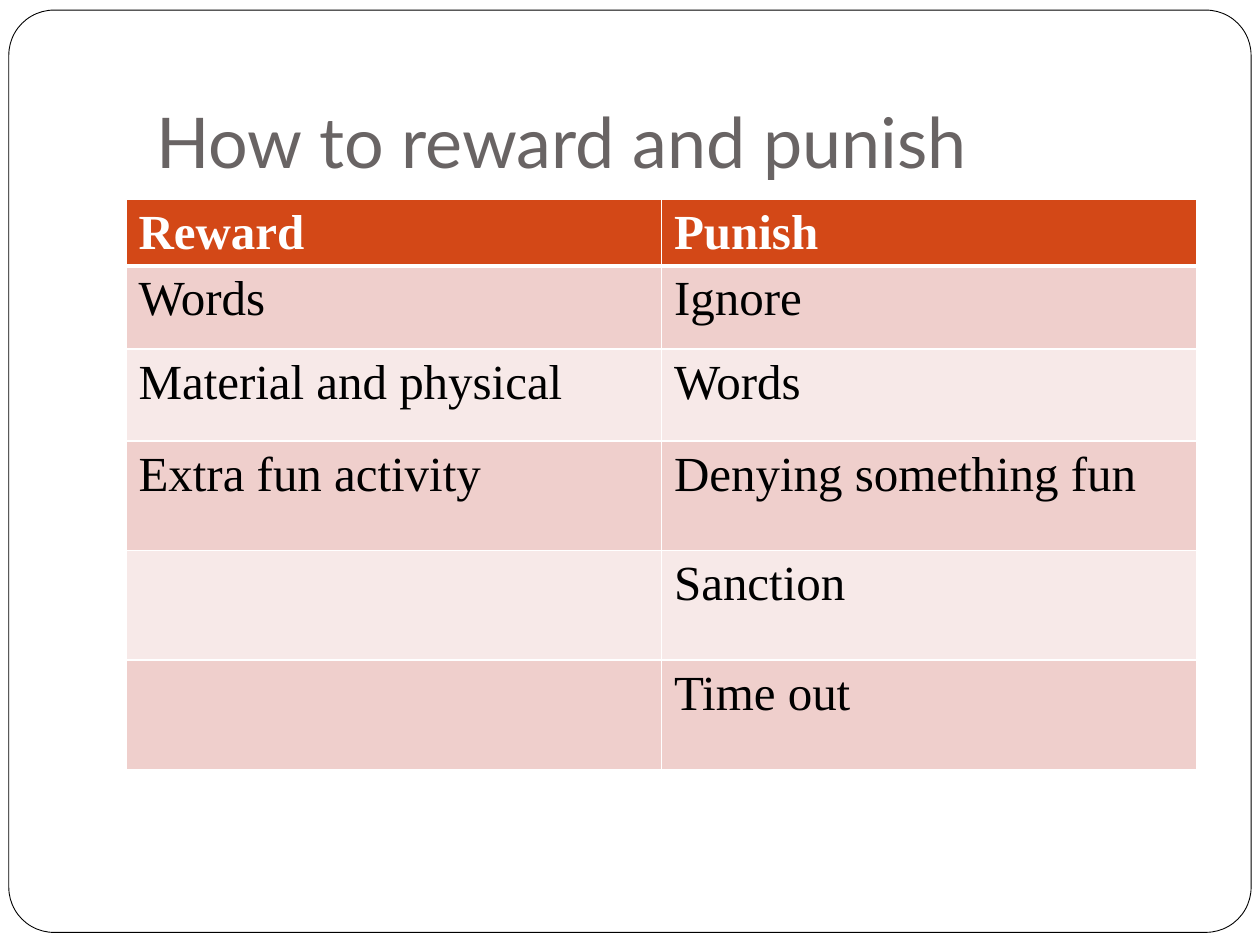
from dataclasses import dataclass

from lxml import etree
from pptx import Presentation
from pptx.dml.color import RGBColor
from pptx.enum.shapes import MSO_SHAPE
from pptx.enum.text import MSO_ANCHOR, PP_ALIGN
from pptx.oxml.ns import qn
from pptx.util import Inches, Pt

ROUNDED = MSO_SHAPE.ROUNDED_RECTANGLE
BOTTOM = MSO_ANCHOR.BOTTOM
LEFT = PP_ALIGN.LEFT

WHITE = RGBColor(0xFF, 0xFF, 0xFF)
BLACK = RGBColor(0x00, 0x00, 0x00)
GREY = RGBColor(0x69, 0x64, 0x64)
ORANGE = RGBColor(0xD3, 0x48, 0x17)
ROSE = RGBColor(0xEF, 0xCF, 0xCC)
PALE_ROSE = RGBColor(0xF7, 0xE9, 0xE8)


@dataclass
class Row:
    reward: str
    punish: str
    height: float


ROWS = [
    Row("Reward", "Punish", 0.53),
    Row("Words", "Ignore", 0.66),
    Row("Material and physical", "Words", 0.73),
    Row("Extra fun activity", "Denying something fun", 0.87),
    Row("", "Sanction", 0.87),
    Row("", "Time out", 0.87),
]


def write(frame, text: str, font: str, size: float, color: RGBColor, bold: bool = False) -> None:
    para = frame.paragraphs[0]
    para.alignment = LEFT
    span = para.add_run()
    span.text = text
    formats = {"name": font, "size": Pt(size), "bold": bold}
    for name, value in formats.items():
        setattr(span.font, name, value)
    span.font.color.rgb = color


def set_borders(cell, color: RGBColor, widths: dict[str, float]) -> None:
    properties = cell._tc.get_or_add_tcPr()
    for side, width in widths.items():
        line = etree.SubElement(properties, qn(f"a:ln{side}"), w=str(Pt(width)))
        fill = etree.SubElement(line, qn("a:solidFill"))
        etree.SubElement(fill, qn("a:srgbClr"), val=str(color))


def add_title(page, text: str):
    title = page.shapes.title
    bounds = {"left": 1, "top": 0.3, "width": 8.5, "height": 1.25}
    for name, value in bounds.items():
        setattr(title, name, Inches(value))
    frame = title.text_frame
    margins = {"margin_left": 0.1, "margin_top": 0.05, "margin_right": 0.1, "margin_bottom": 0.1}
    for name, value in margins.items():
        setattr(frame, name, Inches(value))
    frame.vertical_anchor = BOTTOM
    frame.word_wrap = True
    write(frame, text, "Lato", 40, GREY)
    return title


def add_border_behind(page, title) -> None:
    border = page.shapes.add_shape(ROUNDED, Inches(0.07), Inches(0.08), Inches(9.86), Inches(7.32))
    border.adjustments[0] = 0.049
    border.shadow.inherit = False
    border.fill.solid()
    border.fill.fore_color.rgb = WHITE
    border.line.color.rgb = BLACK
    border.line.width = Pt(0.5)
    title.element.addprevious(border.element)


def add_comparison(page, rows: list[Row]) -> None:
    height = sum(row.height for row in rows)
    table = page.shapes.add_table(
        len(rows), 2, Inches(1), Inches(1.58), Inches(8.5), Inches(height)
    ).table
    for index, row in enumerate(rows):
        table.rows[index].height = Inches(row.height)
        header = index == 0
        fill = ORANGE if header else (PALE_ROSE, ROSE)[index % 2]
        widths = {"L": 1, "R": 1, "T": 3 if index == 1 else 1, "B": 3 if header else 1}
        for column, text in enumerate((row.reward, row.punish)):
            cell = table.cell(index, column)
            set_borders(cell, WHITE, widths)
            cell.fill.solid()
            cell.fill.fore_color.rgb = fill
            if text:
                color = WHITE if header else BLACK
                write(cell.text_frame, text, "Times New Roman", 28, color, header)


def main() -> None:
    deck = Presentation()
    deck.slide_width = Inches(10)
    deck.slide_height = Inches(7.5)
    page = deck.slides.add_slide(deck.slide_layouts[5])
    title = add_title(page, " How to reward and punish")
    add_border_behind(page, title)
    add_comparison(page, ROWS)
    deck.save("out.pptx")


if __name__ == "__main__":
    main()
